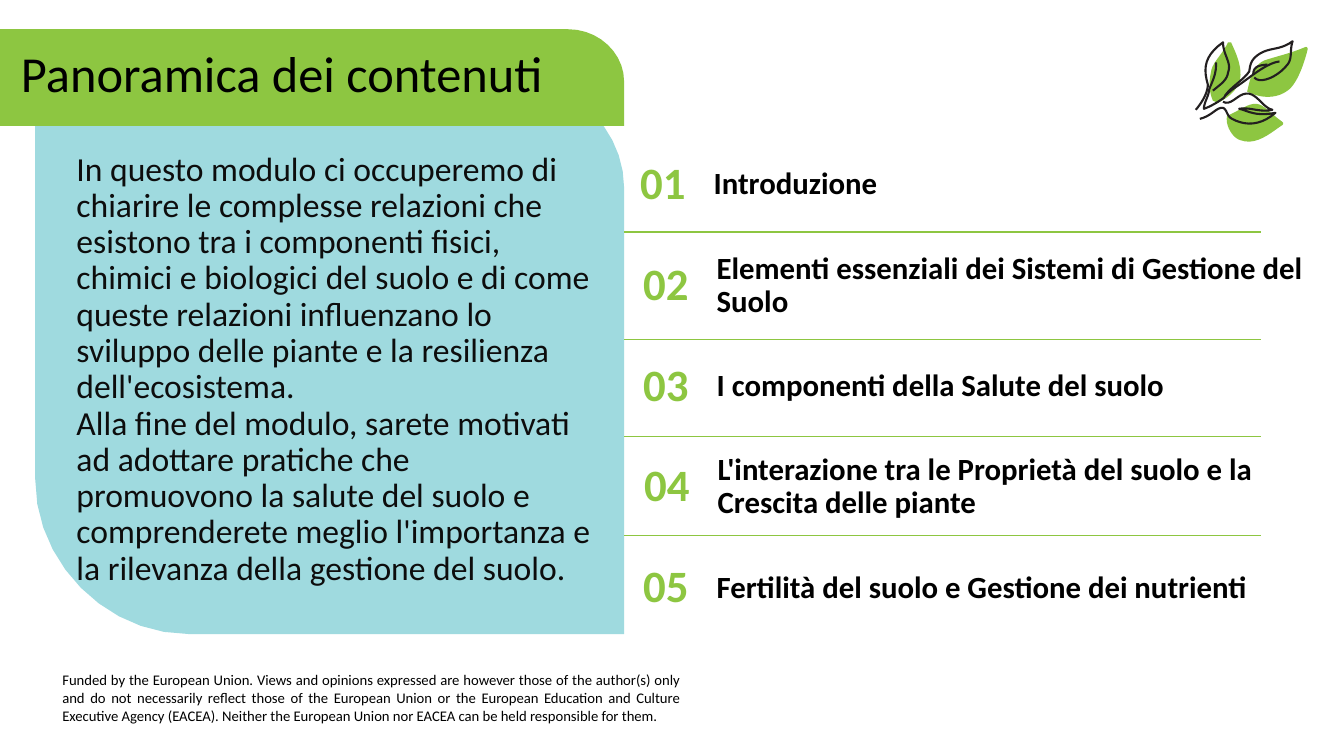
from lxml.etree import SubElement
from pptx import Presentation
from pptx.dml.color import RGBColor
from pptx.enum.shapes import MSO_CONNECTOR
from pptx.enum.text import MSO_ANCHOR, PP_ALIGN
from pptx.oxml.ns import qn
from pptx.util import Inches, Pt

GREEN, AQUA, BLACK, INK = "8DC641", "9FDADF", "000000", "231F20"
STEPS = 10  # straight pieces per curve

BODY = [
    "In questo modulo ci occuperemo di chiarire le complesse relazioni che "
    "esistono tra i componenti fisici, chimici e biologici del suolo e di come "
    "queste relazioni influenzano lo sviluppo delle piante e la resilienza "
    "dell'ecosistema.",
    "Alla fine del modulo, sarete motivati ad adottare pratiche che promuovono "
    "la salute del suolo e comprenderete meglio l'importanza e la rilevanza "
    "della gestione del suolo.",
]
FUNDING = (
    "Funded by the European Union. Views and opinions expressed are however "
    "those of the author(s) only and do not necessarily reflect those of the "
    "European Union or the European Education and Culture Executive Agency "
    "(EACEA). Neither the European Union nor EACEA can be held responsible for them."
)
# Left offset, title width and title of each row
CONTENTS = [
    (0, 4.88, "Introduzione"),
    (0.03, 6.37, "Elementi essenziali dei Sistemi di Gestione del Suolo"),
    (0.03, 4.88, "I componenti della Salute del suolo"),
    (0.04, 6.09, "L'interazione tra le Proprietà del suolo e la Crescita delle piante"),
    (0.03, 5.58, "Fertilità del suolo e Gestione dei nutrienti"),
]
RULES = [2.3, 3.37, 4.33, 5.31]

# Outlines: a start point, then lines (2 numbers) and curves (6 numbers)
PANEL = [(1, 1), (0.26, 1), (0.12, 1, 0, 0.87, 0, 0.72), (0, 0), (0.83, 0),
         (0.92, 0, 1, 0.09, 1, 0.19)]
BANNER = [(0, 0), (0.91, 0), (0.96, 0, 1, 0.25, 1, 0.54), (1, 1), (0, 1)]
LEAVES = [
    [(0.23, 0.67), (0.33, 0.62, 0.43, 0.54, 0.45, 0.43),
     (0.47, 0.31, 0.41, 0.18, 0.36, 0.07), (0.33, 0.07),
     (0.27, 0.2, 0.17, 0.27, 0.16, 0.37), (0.14, 0.46, 0.14, 0.56, 0.18, 0.65)],
    [(0.92, 0.55), (1.01, 0.49, 1.08, 0.3, 1.12, 0.14),
     (1.12, 0.12, 1.11, 0.11, 1.09, 0.12), (0.95, 0.18, 0.81, 0.21, 0.69, 0.25),
     (0.58, 0.3, 0.55, 0.42, 0.52, 0.56), (0.66, 0.63, 0.81, 0.63, 0.92, 0.55)],
    [(0.87, 0.89), (0.88, 0.88, 0.88, 0.87, 0.87, 0.86),
     (0.72, 0.75, 0.68, 0.68, 0.6, 0.68), (0.52, 0.68, 0.42, 0.76, 0.32, 0.8),
     (0.3, 0.9, 0.38, 1.02, 0.45, 1.04), (0.61, 1.1, 0.75, 0.97, 0.87, 0.89)],
]
TWIG = [
    [(0.01, 0.74), (0.07, 0.67, 0.13, 0.57, 0.13, 0.49),
     (0.08, 0.32, 0.1, 0.2, 0.28, 0.07), (0.28, 0.2, 0.37, 0.27, 0.33, 0.37),
     (0.32, 0.45, 0.25, 0.49, 0.18, 0.55)],
    [(0.21, 0.27), (0.22, 0.4, 0.15, 0.5, 0.14, 0.55),
     (0.14, 0.6, 0.09, 0.67, 0.09, 0.73), (0.15, 0.71, 0.22, 0.67, 0.29, 0.62),
     (0.33, 0.53, 0.48, 0.45, 0.54, 0.36), (0.55, 0.3, 0.55, 0.24, 0.65, 0.18),
     (0.75, 0.12, 0.85, 0.15, 0.97, 0.06), (0.94, 0.15, 0.97, 0.23, 0.92, 0.29),
     (0.83, 0.41, 0.65, 0.49, 0.59, 0.42)],
    [(0.84, 0.26), (0.7, 0.28, 0.55, 0.42, 0.4, 0.52),
     (0.35, 0.55, 0.33, 0.58, 0.3, 0.6)],
    [(0.72, 0.29), (0.65, 0.3, 0.58, 0.3, 0.58, 0.39)],
    [(0.28, 0.66), (0.37, 0.71, 0.43, 0.56, 0.54, 0.58),
     (0.63, 0.6, 0.68, 0.72, 0.77, 0.74), (0.65, 0.77, 0.55, 0.71, 0.44, 0.73),
     (0.53, 0.75, 0.6, 0.81, 0.8, 0.77), (0.65, 0.9, 0.5, 0.9, 0.37, 0.83),
     (0.31, 0.8, 0.32, 0.72, 0.27, 0.72), (0.21, 0.72, 0.17, 0.8, 0.05, 0.83)],
]


def rgb(value):
    return RGBColor.from_string(value)


def flatten(outline):
    points = [outline[0]]
    for part in outline[1:]:
        if len(part) == 2:
            points.append(part)
            continue
        x0, y0 = points[-1]
        x1, y1, x2, y2, x3, y3 = part
        for i in range(1, STEPS + 1):
            t = i / STEPS
            a, b, c, d = (1 - t) ** 3, 3 * t * (1 - t) ** 2, 3 * t * t * (1 - t), t ** 3
            points.append((a * x0 + b * x1 + c * x2 + d * x3,
                           a * y0 + b * y1 + c * y2 + d * y3))
    return points


def add_outline(s, box, outline, fill=None, line=None):
    x, y, w, h = box
    points = [(Inches(x + u * w), Inches(y + v * h)) for u, v in flatten(outline)]
    builder = s.shapes.build_freeform(*points[0])
    builder.add_line_segments(points[1:], close=fill is not None)
    sp = builder.convert_to_shape()
    sp.shadow.inherit = False
    if fill:
        sp.fill.solid()
        sp.fill.fore_color.rgb = rgb(fill)
        sp.line.fill.background()
    else:
        sp.fill.background()
        sp.line.color.rgb = rgb(line)
        sp.line.width = Pt(1.5)


def add_text(s, box, texts, size, color=BLACK, bold=False,
             anchor=MSO_ANCHOR.MIDDLE, **para):
    tf = s.shapes.add_textbox(*map(Inches, box)).text_frame
    tf.word_wrap, tf.vertical_anchor = True, anchor
    for i, text in enumerate(texts):
        p = tf.paragraphs[0] if i == 0 else tf.add_paragraph()
        for name, value in ({"line_spacing": 0.9} | para).items():
            setattr(p, name, value)
        r = p.add_run()
        r.text = text
        for name, value in {"name": "Calibri", "size": Pt(size), "bold": bold}.items():
            setattr(r.font, name, value)
        r.font.color.rgb = rgb(color)


def add_panel(s, box):
    x, y, w, h = box
    add_outline(s, box, PANEL, fill=AQUA)
    add_text(s, (x + 0.31, y + 0.64, w - 0.53, h - 0.7), BODY, 24, "0D0D0D",
             anchor=MSO_ANCHOR.TOP)


def add_banner(s, box):
    x, y, w, h = box
    add_outline(s, box, BANNER, fill=GREEN)
    add_text(s, (x + 0.11, y + 0.14, w - 0.68, 0.65), ["Panoramica dei contenuti"], 36)


def add_contents(s, box):
    x, y, w, h = box
    for rule in RULES:
        line = s.shapes.add_connector(MSO_CONNECTOR.STRAIGHT, Inches(x), Inches(rule),
                                      Inches(x + w), Inches(rule))
        line.line.color.rgb = rgb(GREEN)
        line.line.width = Pt(1)
        SubElement(line._element.spPr, qn("a:effectLst"))
    pitch = h / len(CONTENTS)
    for i, (shift, width, title) in enumerate(CONTENTS):
        left, top = x + shift, y + i * pitch
        add_text(s, (left, top, 0.77, 0.75), [f"{i + 1:02}"], 32, GREEN, True,
                 alignment=PP_ALIGN.CENTER)
        add_text(s, (left + 0.79, top, width, 0.75), [title], 22, bold=True)


def add_twig(s, box):
    for leaf in LEAVES:
        add_outline(s, box, leaf, fill=GREEN)
    for stroke in TWIG:
        add_outline(s, box, stroke, line=INK)


def main():
    prs = Presentation()
    prs.slide_width, prs.slide_height = Inches(13.33), Inches(7.5)
    s = prs.slides.add_slide(prs.slide_layouts[6])
    add_panel(s, (0.35, 0.82, 5.84, 5.47))
    add_banner(s, (0, 0.29, 6.19, 0.96))
    add_contents(s, (6.19, 1.46, 6.32, 5))
    add_twig(s, (11.85, 0.35, 1, 1))
    # Funding statement
    add_text(s, (0.52, 6.61, 6.33, 0.66), [FUNDING], 10.5, anchor=MSO_ANCHOR.TOP,
             alignment=PP_ALIGN.JUSTIFY, line_spacing=1.0)
    prs.save("out.pptx")


if __name__ == "__main__":
    main()
